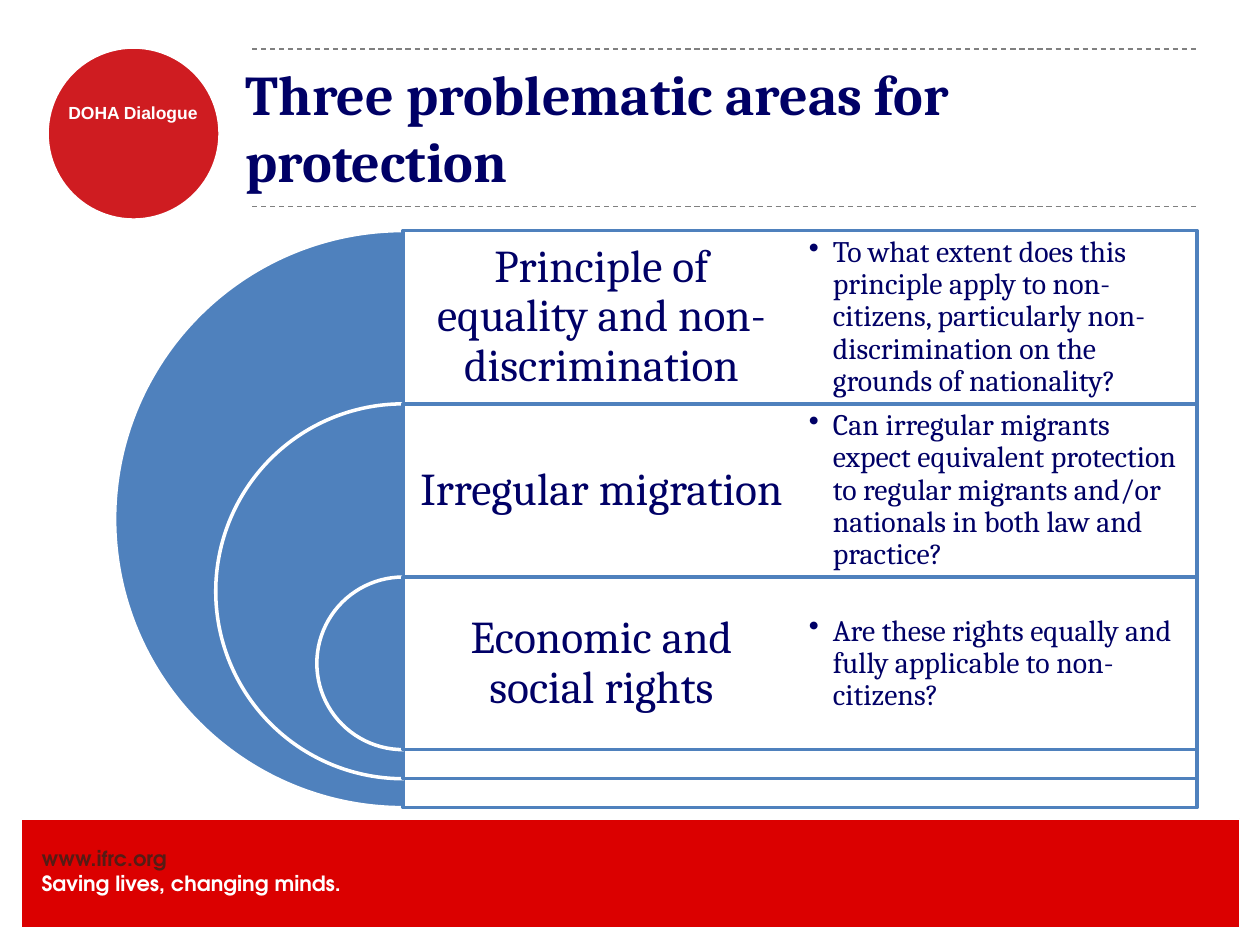
from typing import NamedTuple

from lxml import etree
from pptx import Presentation
from pptx.dml.color import RGBColor
from pptx.enum.dml import MSO_LINE
from pptx.enum.shapes import MSO_CONNECTOR, MSO_SHAPE
from pptx.enum.text import MSO_ANCHOR, MSO_AUTO_SIZE, PP_ALIGN
from pptx.oxml.ns import qn
from pptx.util import Inches, Pt

LEFT, CENTER = PP_ALIGN.LEFT, PP_ALIGN.CENTER
TOP, MIDDLE = MSO_ANCHOR.TOP, MSO_ANCHOR.MIDDLE
RECT, OVAL, PIE = MSO_SHAPE.RECTANGLE, MSO_SHAPE.OVAL, MSO_SHAPE.PIE
STRAIGHT, DASH = MSO_CONNECTOR.STRAIGHT, MSO_LINE.DASH
FIT_NONE = MSO_AUTO_SIZE.NONE
NAVY, BLUE, WHITE, GRAY = "000066", "4F81BD", "FFFFFF", "808080"
SERIF, SANS, BRAND = "Cambria", "Arial", "TeX Gyre Adventor"


class Area(NamedTuple):
    name: str
    issue: str


class Style(NamedTuple):
    size: float
    face: str
    color: str
    bold: bool = False


AREAS = [
    Area("Principle of equality and non-discrimination",
         "To what extent does this principle apply to non-citizens, "
         "particularly non-discrimination on the grounds of nationality?"),
    Area("Irregular migration",
         "Can irregular migrants expect equivalent protection to regular "
         "migrants and/or nationals in both law and practice?"),
    Area("Economic and social rights",
         "Are these rights equally and fully applicable to non-citizens?"),
]
NAME, ISSUE = Style(26, SERIF, NAVY), Style(17, SERIF, NAVY)

# Nested rings: all centred on the left edge of the panels
EDGE, START, ROW, HALF = 3.2, 1.83, 1.375, 3.15
RING, SHRINK = 4.58, 1.605


def rgb(color: str) -> RGBColor:
    return RGBColor.from_string(color)


def set_font(para, style: Style) -> None:
    font = para.font
    font.size, font.name, font.bold = Pt(style.size), style.face, style.bold
    font.color.rgb = rgb(style.color)


def add_shape(slide, kind, x: float, y: float, w: float, h: float,
              fill: str, line: str, weight: float):
    shape = slide.shapes.add_shape(kind, Inches(x), Inches(y), Inches(w), Inches(h))
    shape.shadow.inherit = False
    shape.fill.solid()
    shape.fill.fore_color.rgb = rgb(fill)
    shape.line.color.rgb = rgb(line)
    shape.line.width = Pt(weight)
    return shape


def add_text(slide, x: float, y: float, w: float, h: float,
             lines: list[tuple[str, Style]], inset: float = 0,
             align=LEFT, anchor=TOP):
    box = slide.shapes.add_textbox(Inches(x), Inches(y), Inches(w), Inches(h))
    frame = box.text_frame
    frame.word_wrap, frame.vertical_anchor = True, anchor
    frame.margin_left = frame.margin_right = Inches(inset)
    frame.margin_top = frame.margin_bottom = Inches(inset)
    for i, (text, style) in enumerate(lines):
        para = frame.paragraphs[0] if i == 0 else frame.add_paragraph()
        para.text, para.alignment = text, align
        set_font(para, style)
    return frame


def add_rule(slide, y: float) -> None:
    rule = slide.shapes.add_connector(
        STRAIGHT, Inches(2), Inches(y), Inches(9.5), Inches(y))
    rule.line.color.rgb = rgb(GRAY)
    rule.line.width, rule.line.dash_style = Pt(0.75), DASH
    etree.SubElement(rule._element.spPr, qn("a:effectLst"))


def add_bullet(para, indent: float) -> None:
    props = para._p.get_or_add_pPr()
    props.set("marL", str(Inches(indent)))
    props.set("indent", str(-Inches(indent)))
    mark = etree.Element(qn("a:buChar"), char="•")
    props.insert(0, mark)


def add_area(slide, step: int, area: Area) -> None:
    """Draw one ring with its panel, name and issue."""
    y, size = START + step * ROW, RING - step * SHRINK
    ring = add_shape(slide, PIE, EDGE - size / 2, y, size, size, BLUE, WHITE, 2)
    ring.adjustments[0], ring.adjustments[1] = 54, 162
    panel = add_shape(slide, RECT, EDGE, y, 2 * HALF, size, WHITE, BLUE, 2)
    tint = panel._element.spPr.find(qn("a:solidFill"))[0]
    etree.SubElement(tint, qn("a:alpha"), val="90000")

    name = add_text(slide, EDGE, y, HALF, ROW, [(area.name, NAME)],
                    0.11, CENTER, MIDDLE)
    name.paragraphs[0].line_spacing = 0.9
    issue = add_text(slide, EDGE + HALF, y, HALF, ROW, [], 0.07, LEFT, MIDDLE)
    para = issue.paragraphs[0]
    para.text = area.issue
    add_bullet(para, 0.19)
    para.line_spacing = 0.9
    set_font(para, ISSUE)


def add_title(slide, text: str) -> None:
    title = slide.shapes.title
    title.left, title.top = Inches(1.85), Inches(0.38)
    title.width, title.height = Inches(7.65), Inches(1.25)
    frame = title.text_frame
    frame.text = text
    frame.word_wrap, frame.auto_size = True, FIT_NONE
    frame.vertical_anchor = MIDDLE
    frame.paragraphs[0].alignment = LEFT
    set_font(frame.paragraphs[0], Style(32, SERIF, NAVY, True))


def main() -> None:
    deck = Presentation()
    deck.slide_width, deck.slide_height = Inches(10), Inches(7.5)
    slide = deck.slides.add_slide(deck.slide_layouts[5])
    add_title(slide, "Three problematic areas for protection")

    add_shape(slide, RECT, 0.17, 6.5, 9.67, 0.86, "DB0000", WHITE, 0.75)
    add_text(slide, 0.33, 6.71, 3.42, 0.4, [
        ("www.ifrc.org", Style(12, BRAND, "551C15", True)),
        ("Saving lives, changing minds.", Style(12, BRAND, WHITE, True)),
    ])
    add_shape(slide, OVAL, 0.37, 0.37, 1.38, 1.38, "CF1C21", WHITE, 2.5)
    add_text(slide, 0.43, 0.81, 1.25, 0.17,
             [("DOHA Dialogue", Style(10, SANS, WHITE, True))], align=CENTER)
    for y in (0.39, 1.64):
        add_rule(slide, y)

    for step, area in enumerate(AREAS):
        add_area(slide, step, area)
    deck.save("out.pptx")


if __name__ == "__main__":
    main()
